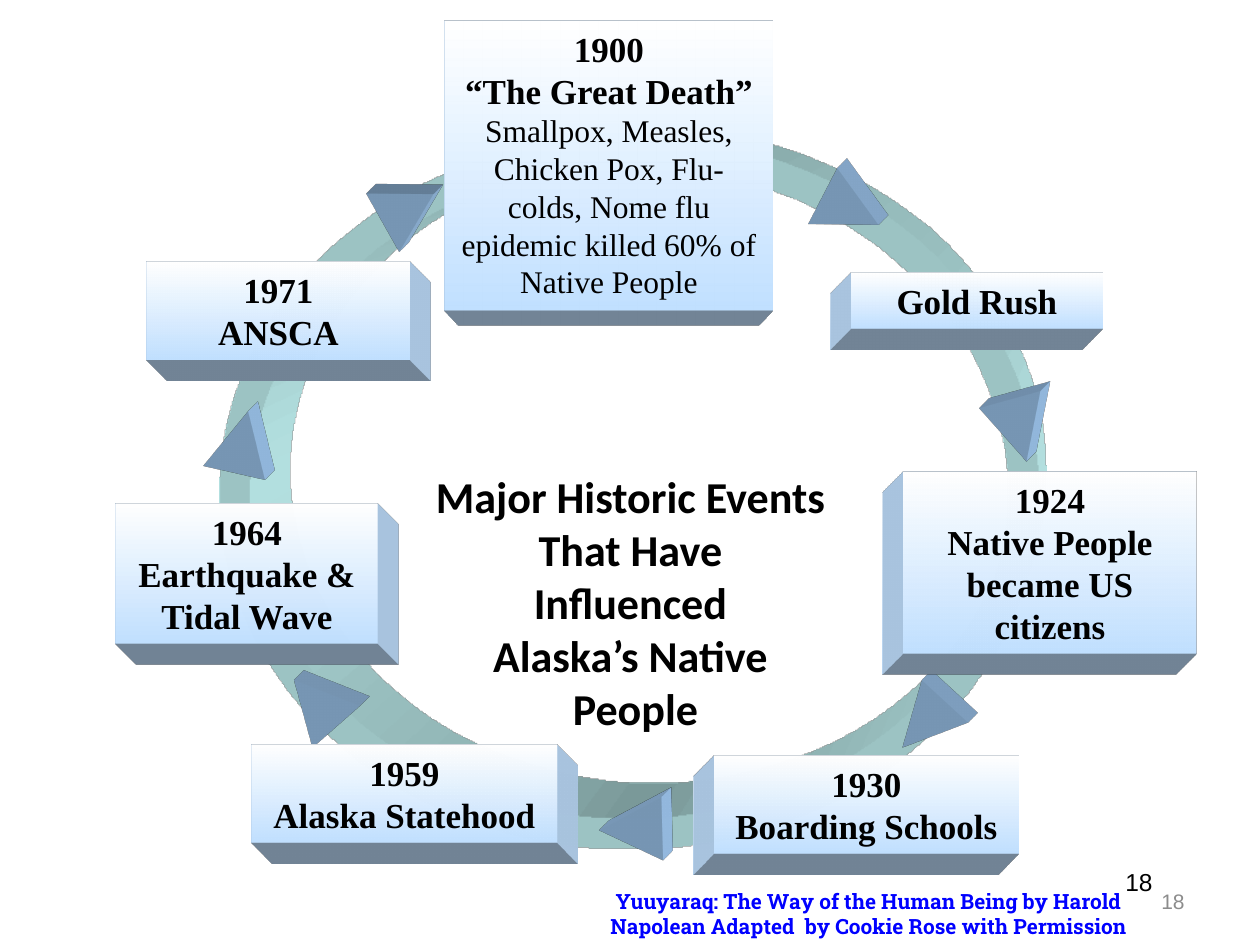
import pptx
import pptx.dml.color
import pptx.enum.shapes
import pptx.enum.text
import pptx.oxml
import pptx.util

SCALE = 914400 / 126
SHAPES = pptx.enum.shapes.MSO_SHAPE
ALIGN = pptx.enum.text.PP_ALIGN
ANCHOR = pptx.enum.text.MSO_ANCHOR
NAMESPACE = 'xmlns:a="http://schemas.openxmlformats.org/drawingml/2006/main"'

deck = pptx.Presentation()
deck.slide_width = round(1260 * SCALE)
deck.slide_height = round(945 * SCALE)
page = deck.slides.add_slide(deck.slide_layouts[6])


def add_solid(kind, area, colors, camera, depth):
    shape = page.shapes.add_shape(kind, *[round(n * SCALE) for n in area])
    shape.shadow.inherit = False
    shape.line.fill.background()
    if len(colors) == 1:
        shape.fill.solid()
        shape.fill.fore_color.rgb = pptx.dml.color.RGBColor.from_string(colors[0])
    else:
        shape.fill.gradient()
        shape.fill.gradient_angle = 270
        for stop, color in zip(shape.fill.gradient_stops, colors):
            stop.color.rgb = pptx.dml.color.RGBColor.from_string(color)
    for xml in (
        f'<a:scene3d {NAMESPACE}><a:camera prst="{camera}"/>'
        '<a:lightRig rig="legacyFlat3" dir="b"/></a:scene3d>',
        f'<a:sp3d {NAMESPACE} extrusionH="{depth}" prstMaterial="legacyMatte">'
        '<a:bevelT w="13500" h="13500" prst="angle"/>'
        '<a:bevelB w="13500" h="13500" prst="angle"/>'
        f'<a:extrusionClr><a:srgbClr val="{colors[-1]}"/></a:extrusionClr></a:sp3d>',
    ):
        shape.element.spPr.append(pptx.oxml.parse_xml(xml))
    return shape


def write(para, text, size, font, color="000000", bold=True):
    span = para.add_run()
    span.text = text
    span.font.size = pptx.util.Pt(size)
    span.font.name = font
    span.font.bold = bold
    span.font.color.rgb = pptx.dml.color.RGBColor.from_string(color)


ring = add_solid(
    SHAPES.DONUT, (220, 136, 819, 714), ["CCFFFF"], "legacyPerspectiveTopRight", 430200)
ring.adjustments[0] = 31 / 714

arrows = [
    (210, 410, 63, 63, 282.8),
    (379, 175, 58, 67, 330.6),
    (819, 179, 63, 63, 27.4),
    (987, 399, 63, 63, 74.7),
    (892, 693, 63, 63, 132.6),
    (284, 672, 63, 63, 228.3),
    (599, 798, 63, 63, 178.6),
]
for *area, turn in arrows:
    arrow = add_solid(
        SHAPES.RIGHT_ARROW, area, ["A9D4FF"], "legacyObliqueTopRight", 201600)
    arrow.adjustments[0] = 0
    arrow.adjustments[1] = 1
    arrow.rotation = turn

LEFT, RIGHT = "legacyObliqueBottomLeft", "legacyObliqueBottomRight"
events = [
    (445, 21, 328, 289, "legacyPerspectiveBottom", 887400, [
        ("1900", 20, True), ("“The Great Death”", 20, True),
        ("Smallpox, Measles, Chicken Pox, Flu-colds, Nome flu epidemic killed "
         "60% of Native People", 18, False)]),
    (903, 472, 294, 182, LEFT, 430200, [
        ("1924", 20, True), ("Native People became US citizens", 20, True)]),
    (714, 756, 305, 98, LEFT, 430200, [
        ("1930", 20, True), ("Boarding Schools", 20, True)]),
    (252, 745, 305, 98, RIGHT, 430200, [
        ("1959", 20, True), ("Alaska Statehood", 20, True)]),
    (116, 504, 262, 140, RIGHT, 430200, [
        ("1964", 20, True), ("Earthquake & Tidal Wave", 20, True)]),
    (147, 262, 263, 98, RIGHT, 430200, [("1971", 20, True), ("ANSCA", 20, True)]),
    (851, 273, 252, 56, LEFT, 430200, [("Gold Rush", 20, True)]),
]
for *area, camera, depth, lines in events:
    box = add_solid(SHAPES.RECTANGLE, area, ["FFFFFF", "C1E0FF"], camera, depth)
    box.text_frame.word_wrap = True
    box.text_frame.vertical_anchor = ANCHOR.TOP
    for index, (text, size, bold) in enumerate(lines):
        para = box.text_frame.add_paragraph() if index else box.text_frame.paragraphs[0]
        para.alignment = ALIGN.CENTER
        write(para, text, size, "Times New Roman", bold=bold)

title = ["Major Historic Events ", "That Have ", "Influenced ", "Alaska’s Native ", "People"]
credit = [" Yuuyaraq: The Way of the Human Being by Harold Napolean "
          "Adapted  by Cookie Rose with Permission"]
labels = [
    (903, 876, 294, 50, ANCHOR.MIDDLE, ALIGN.RIGHT, ["18"], 12, "Arial", "8C8C8C", False),
    (903, 861, 262, 63, ANCHOR.TOP, ALIGN.RIGHT, ["18"], 14, "Arial", "000000", False),
    (598, 882, 609, 63, ANCHOR.TOP, ALIGN.LEFT, credit, 12, "Roboto Slab", "0000FF", True),
    (399, 479, 473, 246, ANCHOR.MIDDLE, ALIGN.CENTER, title, 25.2, "Calibri", "000000", True),
]
for *area, anchor, align, lines, size, font, color, bold in labels:
    box = page.shapes.add_textbox(*[round(n * SCALE) for n in area])
    box.text_frame.word_wrap = True
    box.text_frame.vertical_anchor = anchor
    para = box.text_frame.paragraphs[0]
    para.alignment = align
    for index, text in enumerate(lines):
        if index:
            para.add_line_break()
        write(para, text, size, font, color, bold)

deck.save("out.pptx")
